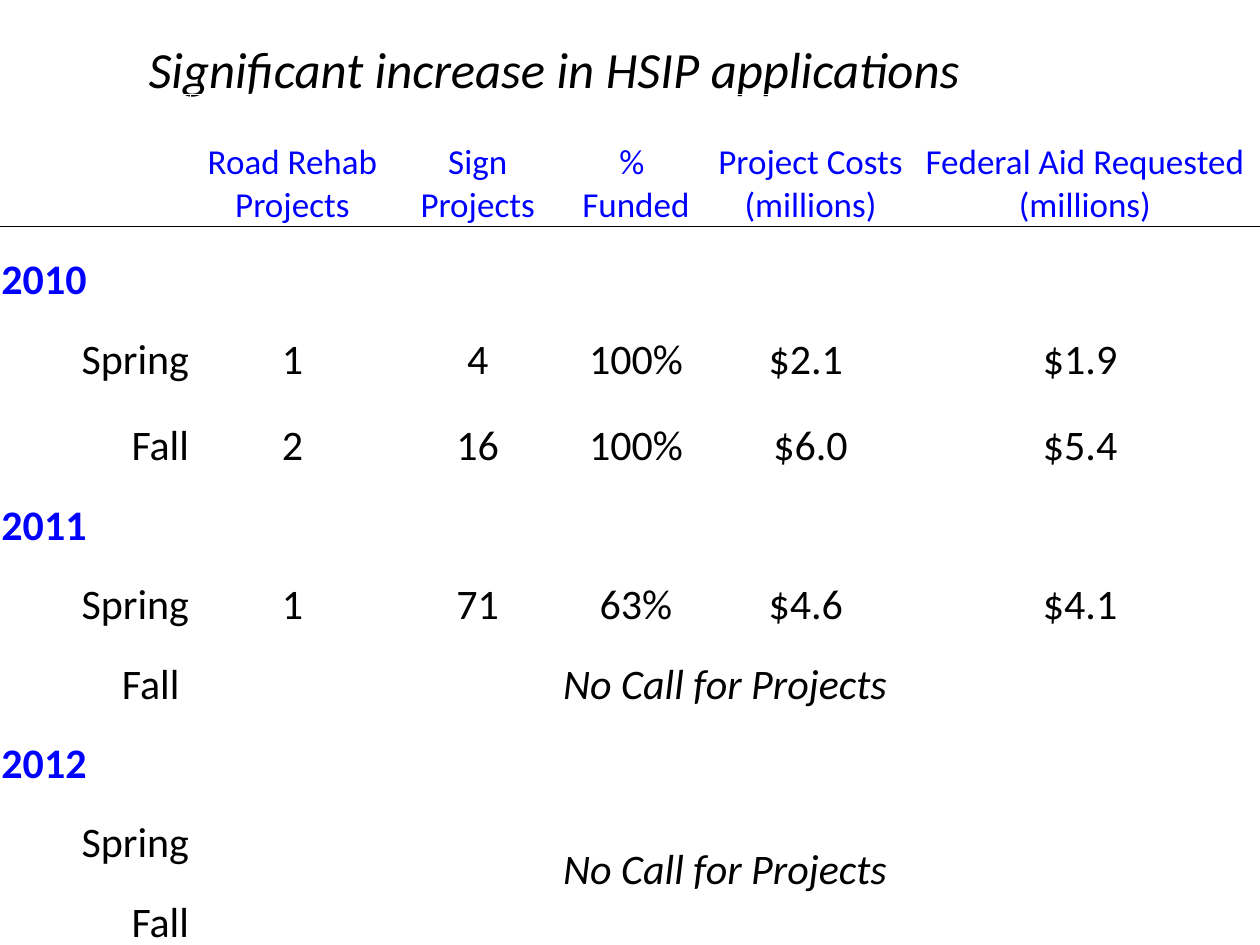
from dataclasses import dataclass

from lxml.etree import SubElement
from pptx import Presentation
from pptx.dml.color import RGBColor
from pptx.enum.text import MSO_ANCHOR as Anchor, MSO_AUTO_SIZE as AutoSize, PP_ALIGN as Align
from pptx.oxml.ns import qn
from pptx.util import Cm, Pt


@dataclass(frozen=True)
class Theme:
    font: str = "Calibri"
    ink: str = "000000"
    accent: str = "0000FF"
    paper: str = "FFFFFF"
    title_size: int = 29
    header_size: int = 20
    body_size: int = 24
    rule_width: int = 1


THEME = Theme()
NO_TABLE_STYLE = "{2D5ABB26-0587-4C30-8999-92F81FD0307C}"

# Table grid in centimetres
COLUMN_WIDTHS = (3.84, 4.11, 2.95, 0.41, 1.83, 1.19, 3.28, 0.74, 7.04)
HEADER_HEIGHT, ROW_HEIGHT, TALL_ROW_HEIGHT = 2.67, 1.6, 1.75
TALL_ROW = 3
FIELD_COLUMNS = (0, 1, 2, 4, 6, 8)
PAIR_STARTS = (2, 4, 6)

HEADERS = ("", "Road Rehab Projects", "Sign Projects", "% \nFunded",
           "Project Costs (millions)", "Federal Aid Requested (millions)")
NO_CALL = "No Call for Projects"
ROWS = (
    ("2010",),
    ("Spring", "1", "4", "100%", "$2.1 ", "$1.9 "),
    ("Fall", "2", "16", "100%", "$6.0", "$5.4 "),
    ("2011",),
    ("Spring", "1", "71", "63%", "$4.6 ", "$4.1 "),
    ("Fall ", NO_CALL),
    ("2012",),
    ("Spring", NO_CALL),
    ("Fall",),
)


def write_text(frame, text, *, size, color=THEME.ink, align=Align.LEFT,
               bold=False, italic=False, space_before=0):
    """Fill a text frame, one paragraph for each line of text."""
    for index, line in enumerate(text.split("\n")):
        paragraph = frame.add_paragraph() if index else frame.paragraphs[0]
        paragraph.alignment = align
        paragraph.space_before = Pt(space_before)
        run = paragraph.add_run()
        run.text = line
        font = run.font
        font.name, font.size = THEME.font, Pt(size)
        font.bold, font.italic = bold, italic
        font.color.rgb = RGBColor.from_string(color)


class SlideBuilder:
    def __init__(self, presentation, theme):
        self.theme = theme
        self.slide = presentation.slides.add_slide(presentation.slide_layouts[1])
        title = self.slide.shapes.title
        title.element.getparent().remove(title.element)

    def heading(self, text, left, top, width, height):
        """Put an unbulleted heading in the body placeholder."""
        shape = self.slide.placeholders[1]
        shape.left, shape.top, shape.width, shape.height = map(Cm, (left, top, width, height))
        frame = shape.text_frame
        frame.word_wrap, frame.auto_size = True, AutoSize.NONE
        write_text(frame, text, size=self.theme.title_size, italic=True, space_before=7)
        properties = frame.paragraphs[0]._p.get_or_add_pPr()
        properties.set("marL", "0")
        properties.set("indent", "0")
        SubElement(properties, qn("a:buNone"))

    def table(self, left, top, widths, heights):
        """Add a plain table with a dark rule under its first row."""
        frame = self.slide.shapes.add_table(
            len(heights), len(widths), Cm(left), Cm(top), Cm(sum(widths)), Cm(sum(heights)))
        table = frame.table
        table.first_row = table.horz_banding = False
        table._tbl.tblPr.find(qn("a:tableStyleId")).text = NO_TABLE_STYLE
        for column, width in zip(table.columns, widths):
            column.width = Cm(width)
        for index, (row, height) in enumerate(zip(table.rows, heights)):
            row.height = Cm(height)
            for cell in row.cells:
                self.borders(cell, above=index == 1, below=index == 0)
                cell.fill.background()
        return table

    def borders(self, cell, above, below):
        properties = cell._tc.get_or_add_tcPr()
        for side, dark in (("L", False), ("R", False), ("T", above), ("B", below)):
            line = SubElement(properties, qn(f"a:ln{side}"), w=str(Pt(self.theme.rule_width)))
            fill = SubElement(line, qn("a:solidFill"))
            SubElement(fill, qn("a:srgbClr"), val=self.theme.ink if dark else self.theme.paper)

    def cell(self, cell, text, anchor=Anchor.BOTTOM, **text_format):
        cell.margin_left = cell.margin_right = cell.margin_top = Cm(0.03)
        cell.margin_bottom = 0
        cell.vertical_anchor = anchor
        write_text(cell.text_frame, text, **text_format)


def fill_table(builder, table):
    theme = builder.theme
    last = len(COLUMN_WIDTHS) - 1

    for row, values in enumerate((HEADERS, *ROWS)):
        # Merged cells: a note spans the data area, other rows pair narrow columns
        if NO_CALL in values:
            bottom = row + 1 if row == len(ROWS) - 1 else row
            table.cell(row, 1).merge(table.cell(bottom, last))
        elif row < len(ROWS):
            for start in PAIR_STARTS:
                table.cell(row, start).merge(table.cell(row, start + 1))

        # Cell text
        for column, text in zip(FIELD_COLUMNS, values):
            if not text:
                continue
            style = {"size": theme.body_size, "align": Align.CENTER}
            if row == 0:
                style.update(size=theme.header_size, color=theme.accent)
            elif text == NO_CALL:
                style.update(italic=True)
                if bottom > row:
                    style.update(anchor=Anchor.MIDDLE)
            elif column == 0 and text.isdigit():
                style.update(align=Align.LEFT, color=theme.accent, bold=True)
            elif column == 0:
                style.update(align=Align.RIGHT)
            builder.cell(table.cell(row, column), text, **style)


def main():
    presentation = Presentation()
    presentation.slide_width, presentation.slide_height = Cm(25.4), Cm(19.05)
    builder = SlideBuilder(presentation, THEME)

    # Heading
    builder.heading("Significant increase in HSIP applications", 2.74, 0.64, 22.66, 2.11)

    # Applications by year and season
    heights = [HEADER_HEIGHT] + [ROW_HEIGHT] * len(ROWS)
    heights[TALL_ROW] = TALL_ROW_HEIGHT
    table = builder.table(0, 1.9, COLUMN_WIDTHS, heights)
    fill_table(builder, table)

    presentation.save("out.pptx")


if __name__ == "__main__":
    main()
